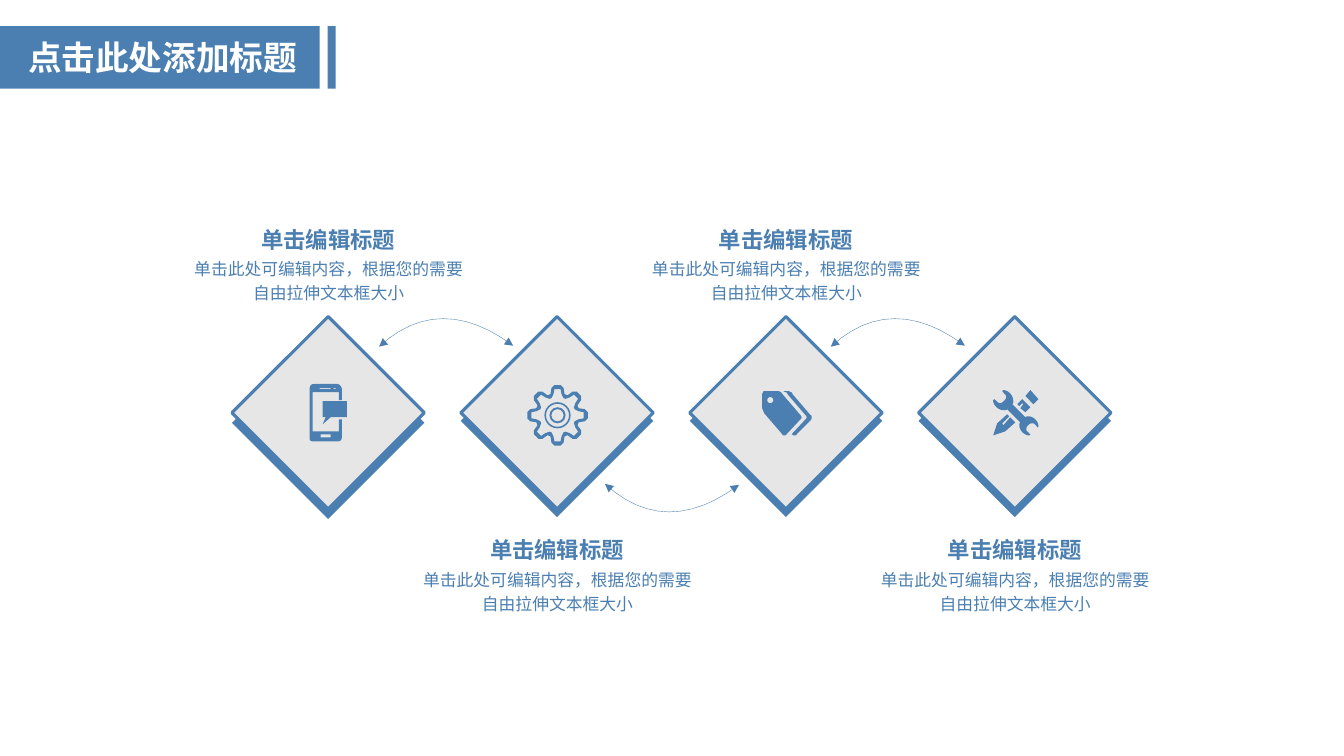
import math

from lxml import etree
from pptx import Presentation, util as u
from pptx.dml.color import RGBColor
from pptx.enum import shapes, text
from pptx.oxml.ns import qn

PX = 9144  # 100 px to the inch
BLUE, GREY, WHITE = "4B7FB1", "E6E6E6", "FFFFFF"
STEP = 227  # between diamond centres
ARC_STEP = 224
HEADING = "单击编辑标题"
BODY = "单击此处可编辑内容，根据您的需要自由拉伸文本框大小"

# Icon outlines around the diamond centre: a pair is a corner, six numbers a cubic curve
PHONE = [
    [(10, 18), (-16, 18), (-16, -21), (10, -21), (10, -13), (13, -13), (13, -24),
     (13, -26, 11, -29, 8, -29), (-15, -29), (-18, -29, -19, -26, -19, -24), (-19, 24),
     (-19, 27, -18, 28, -15, 28), (8, 28), (11, 28, 13, 27, 13, 24), (13, 6), (10, 6)],
    [(5, -25), (7, -25), (7, -24), (5, -24)],
    [(-9, -25), (2, -25), (2, -24), (-9, -24)],
    [(-8, 21), (2, 21), (2, 24), (-8, 24)],
]
BUBBLE = [[(-6, 4), (-3, 4), (-6, 11), (2, 4), (18, 4), (18, -12), (-6, -12)]]
TAG = [
    [(14, 2), (14, 2, 15, 3, 15, 4), (15, 5, 14, 6, 14, 6), (0, 21),
     (-1, 22, -1, 22, -2, 22), (-3, 22, -4, 22, -4, 21), (-22, 0),
     (-22, -1, -23, -1, -23, -3), (-24, -4, -24, -5, -24, -6), (-24, -18),
     (-24, -19, -24, -20, -23, -21), (-23, -22, -22, -22, -21, -22), (-9, -22),
     (-8, -22, -7, -22, -6, -21), (-5, -21, -5, -20, -4, -19)],
    [(-16, -10), (-12, -10, -12, -16, -16, -16), (-20, -16, -20, -10, -16, -10)],
]
BACK_TAG = [
    [(24, 2), (25, 2, 25, 3, 25, 4), (25, 5, 25, 6, 24, 7), (10, 21),
     (10, 22, 9, 22, 8, 22), (7, 22, 6, 22, 6, 21), (5, 21), (19, 6),
     (19, 6, 20, 5, 20, 4), (20, 3, 19, 2, 19, 2), (1, -19),
     (1, -20, 0, -21, -1, -21), (-2, -21, -3, -22, -3, -22), (1, -22),
     (2, -22, 3, -22, 4, -21), (5, -21, 6, -20, 6, -19)],
]
PENCIL = [[(-5, 4), (-12, 12), (-13, 10), (-6, 3), (-8, 1), (-18, 10),
           (-22, 22), (-10, 18), (0, 9)]]
FERRULE = [[(4, -7), (7, -10), (8, -9), (5, -5), (10, -1), (15, -6), (7, -14), (2, -9)]]
CAP = [[(10, -17), (15, -23), (23, -14), (18, -9)]]
WRENCH = [
    [(13, 3), (12, 3, 11, 3, 10, 4), (-3, -9), (-2, -10, -2, -11, -2, -12),
     (-2, -18, -7, -23, -12, -23), (-13, -22), (-9, -17, -9, -18, -9, -16),
     (-9, -14, -13, -10, -15, -10), (-17, -10, -17, -11, -21, -14), (-22, -13),
     (-22, -8, -17, -3, -11, -3), (-10, -3, -9, -3, -8, -4), (5, 9),
     (4, 10, 4, 11, 4, 12), (4, 17, 9, 22, 14, 22), (15, 21),
     (11, 17, 11, 18, 11, 15), (11, 13, 14, 10, 16, 10), (19, 10, 19, 10, 22, 14),
     (23, 13), (23, 8, 18, 3, 13, 3)],
]


def rgb(color):
    return RGBColor.from_string(color)


def paint(sp, fill=None, line=None, width=0):
    sp.shadow.inherit = False
    if fill:
        sp.fill.solid()
        sp.fill.fore_color.rgb = rgb(fill)
    else:
        sp.fill.background()
    if line:
        sp.line.color.rgb = rgb(line)
        sp.line.width = u.Pt(width)
    else:
        sp.line.fill.background()
    return sp


def add_preset(s, kind, x, y, w, h, **look):
    return paint(s.shapes.add_shape(kind, x * PX, y * PX, w * PX, h * PX), **look)


def add_text(s, x, y, w, h, words, size, color=BLUE, bold=False, inset=True,
             align=None, spacing=None):
    tf = s.shapes.add_textbox(x * PX, y * PX, w * PX, h * PX).text_frame
    tf.word_wrap = True
    tf.auto_size = text.MSO_AUTO_SIZE.SHAPE_TO_FIT_TEXT
    if not inset:
        tf.margin_left = tf.margin_right = tf.margin_top = tf.margin_bottom = 0
    p = tf.paragraphs[0]
    p.alignment = align
    p.line_spacing = spacing
    r = p.add_run()
    r.text = words
    r.font.name, r.font.size, r.font.bold = "Arial", u.Pt(size), bold
    r.font.color.rgb = rgb(color)


def flatten(outline, steps=12):
    """Turn corners and cubic curves into plain points."""
    points = [outline[0]]
    for part in outline[1:]:
        if len(part) == 2:
            points.append(part)
            continue
        x0, y0 = points[-1]
        xs, ys = (x0, *part[::2]), (y0, *part[1::2])
        for i in range(1, steps + 1):
            t = i / steps
            weights = ((1 - t) ** 3, 3 * t * (1 - t) ** 2, 3 * t * t * (1 - t), t ** 3)
            points.append(tuple(sum(k * v for k, v in zip(weights, c)) for c in (xs, ys)))
    return points


def add_outline(s, x, y, outlines, close=True, **look):
    builder = None
    for outline in outlines:
        points = [(round((x + a) * PX), round((y + b) * PX)) for a, b in flatten(outline)]
        if builder is None:
            builder = s.shapes.build_freeform(*points[0])
        else:
            builder.move_to(*points[0])
        builder.add_line_segments(points[1:], close=close)
    return paint(builder.convert_to_shape(), **look)


def gear_rim(half_tooth):
    """Repeat one tooth, given as its right half, eight times around."""
    tooth = [(-a, b) for a, b in half_tooth] + half_tooth[::-1]
    turns = [(math.cos(k * math.pi / 4), math.sin(k * math.pi / 4)) for k in range(8)]
    return [(a * c - b * d, a * d + b * c) for c, d in turns for a, b in tooth]


def add_gear(s, cx, cy):
    rims = [gear_rim([(7, -21), (6, -27), (3, -30)]), gear_rim([(6, -17), (4, -21), (3, -26)])]
    add_outline(s, cx, cy, rims, fill=BLUE)
    for radius, thickness in ((13, 0.06), (8, 0.12)):
        ring = add_preset(s, shapes.MSO_SHAPE.DONUT, cx - radius, cy - radius,
                          2 * radius, 2 * radius, fill=BLUE)
        ring.adjustments[0] = thickness


def add_banner(s, x, y, w, h):
    for left, width in ((x, w - 16), (x + w - 8, 8)):
        add_preset(s, shapes.MSO_SHAPE.RECTANGLE, left, y, width, h, fill=BLUE)
    add_text(s, x + 18, y + 6, w - 18, 50, "点击此处添加标题", 24, color=WHITE, bold=True)


def add_arc(s, x, y, up):
    d = 1 if up else -1
    curve = [(0, 0), (40, -37 * d, 85, -37 * d, 133, -d)]
    sp = add_outline(s, x, y, [curve], close=False, line=BLUE, width=0.25)
    ln = sp.line._get_or_add_ln()
    for end in ("a:headEnd", "a:tailEnd"):
        etree.SubElement(ln, qn(end), type="triangle")


def add_diamond(s, cx, cy, drop):
    side = 135
    for down, look in ((drop, dict(fill=BLUE)), (0, dict(fill=GREY, line=BLUE, width=2.25))):
        sp = add_preset(s, shapes.MSO_SHAPE.RECTANGLE, cx - side // 2 - 1,
                        cy - side // 2 - 1 + down, side, side, **look)
        sp.rotation = 315


def add_caption(s, cx, y):
    look = dict(inset=False, align=text.PP_ALIGN.CENTER, spacing=1.2)
    add_text(s, cx - 85, y, 169, 30, HEADING, 16, bold=True, **look)
    add_text(s, cx - 135, y + 34, 270, 46, BODY, 12, **look)


def add_steps(s, x, y):
    """Four diamonds with icons and captions; x, y is the first centre."""
    # Double-headed arcs, above and below in turn
    for i in range(3):
        up = i % 2 == 0
        add_arc(s, x + 50 + i * ARC_STEP, y - 66 if up else y + 70, up)
    icons = ([PHONE, BUBBLE], None, [TAG, BACK_TAG], [PENCIL, FERRULE, CAP, WRENCH])
    for i, icon in enumerate(icons):
        cx = x + i * STEP
        add_diamond(s, cx, y, 8 if i else 10)
        if icon:
            for part in icon:
                add_outline(s, cx, y, part, fill=BLUE)
        else:
            add_gear(s, cx, y + 2)
        add_caption(s, cx, y + 117 if i % 2 else y - 191)


def main():
    prs = Presentation()
    prs.slide_width, prs.slide_height = 1333 * PX, 750 * PX
    s = prs.slides.add_slide(prs.slide_layouts[6])
    add_banner(s, 0, 26, 333, 62)
    add_steps(s, 326, 410)
    prs.save("out.pptx")


if __name__ == "__main__":
    main()
